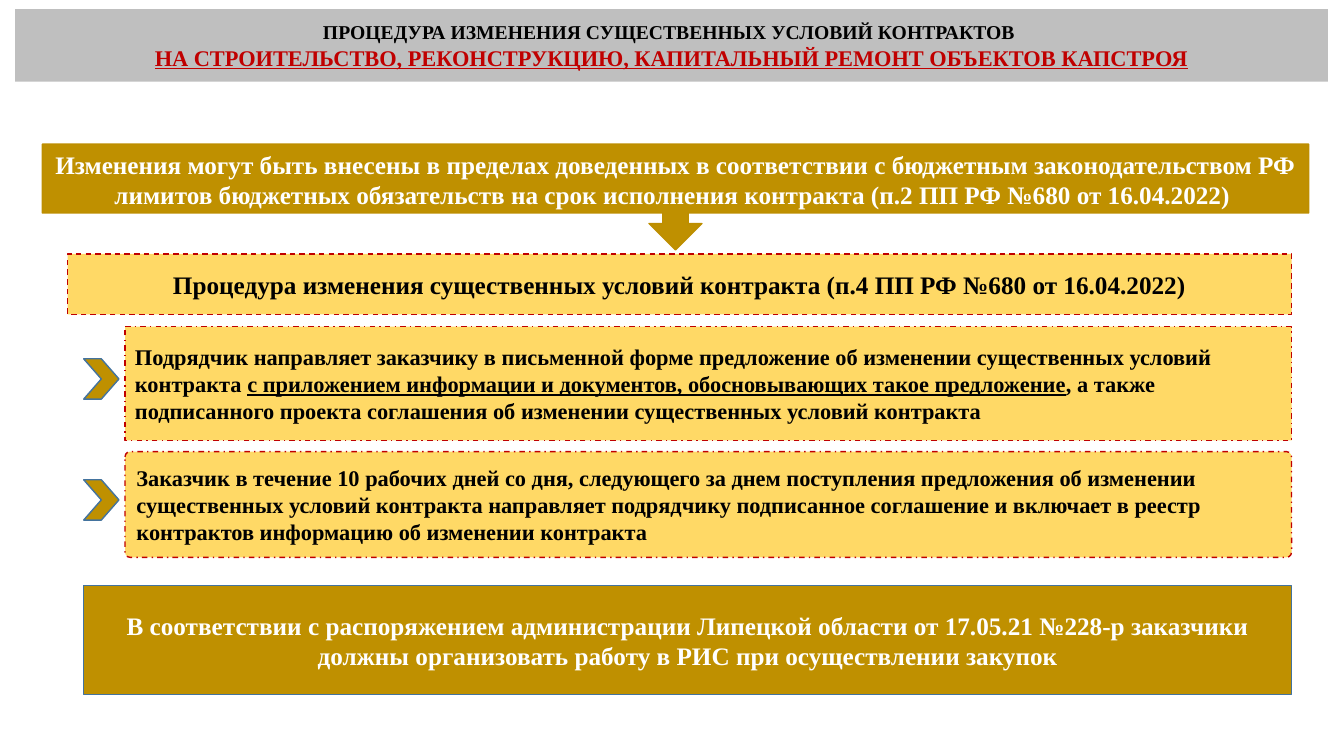
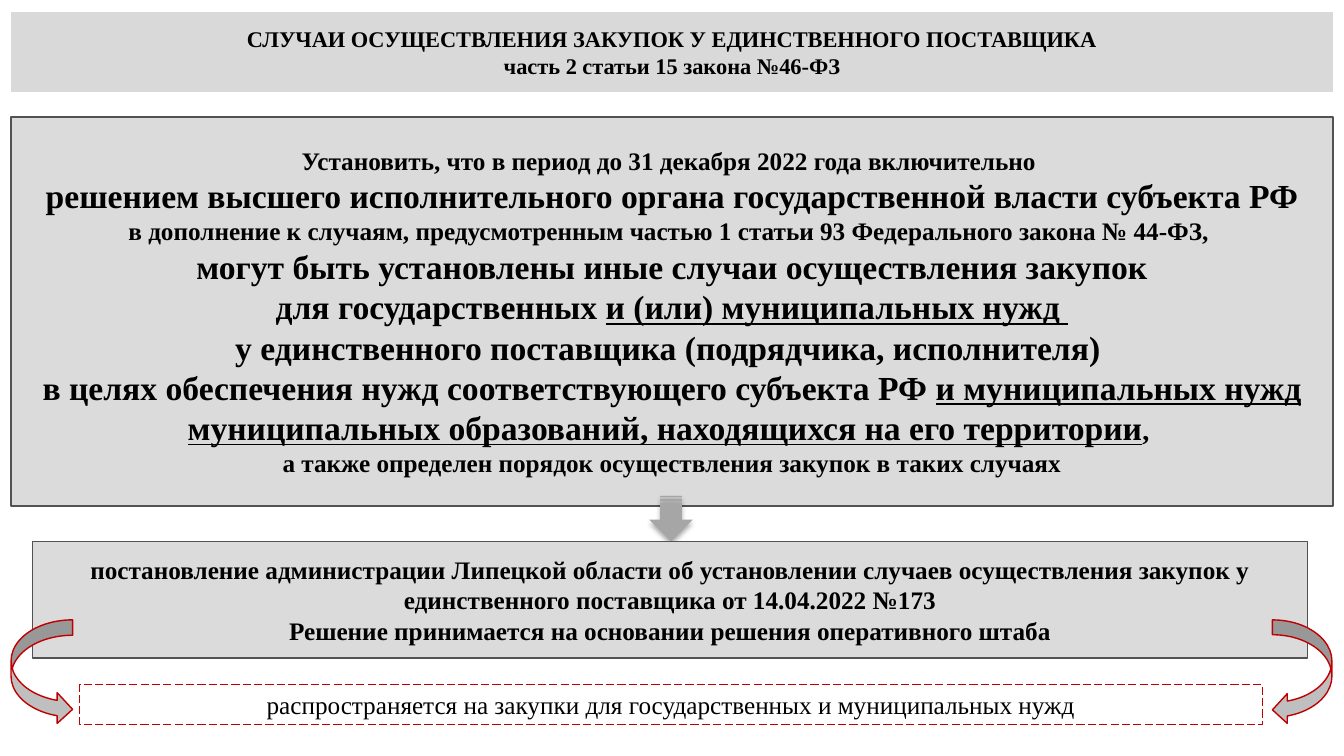
"""Two slides on changing contract terms and on single-supplier procurement."""
import pptx
import pptx.dml.color
import pptx.enum.dml
import pptx.enum.shapes
import pptx.enum.text
import pptx.oxml
import pptx.oxml.ns
import pptx.util

RGB = pptx.dml.color.RGBColor
SHAPE = pptx.enum.shapes.MSO_SHAPE
DASH = pptx.enum.dml.MSO_LINE
ALIGN = pptx.enum.text.PP_ALIGN
ANCHOR = pptx.enum.text.MSO_ANCHOR

PX = 9144
FONT = "Times New Roman"
BLACK = RGB(0x00, 0x00, 0x00)
WHITE = RGB(0xFF, 0xFF, 0xFF)
RED = RGB(0xC0, 0x00, 0x00)
GOLD = RGB(0xBF, 0x90, 0x00)
GOLD_EDGE = RGB(0xBD, 0x8E, 0x00)
SAND = RGB(0xFF, 0xD9, 0x66)
BLUE_EDGE = RGB(0x43, 0x73, 0x9E)
BAND_DARK = RGB(0xBF, 0xBF, 0xBF)
BAND_LIGHT = RGB(0xD9, 0xD9, 0xD9)
PANEL_GRAY = RGB(0xDB, 0xDB, 0xDB)
PANEL_EDGE = RGB(0x52, 0x52, 0x52)
ARROW_GRAY = RGB(0xA6, 0xA6, 0xA6)

STYLES = {
    "dark band": dict(fill=BAND_DARK),
    "light band": dict(fill=BAND_LIGHT),
    "limits": dict(fill=GOLD, edge=GOLD_EDGE, ink=WHITE),
    "gold": dict(fill=GOLD, edge=BLUE_EDGE, ink=WHITE),
    "procedure": dict(fill=SAND, edge=RED, dash=DASH.DASH),
    "step": dict(fill=SAND, edge=RED, dash=DASH.DASH_DOT),
    "panel": dict(fill=PANEL_GRAY, edge=PANEL_EDGE),
    "down arrow": dict(fill=ARROW_GRAY),
    "curved arrow": dict(fill=BAND_DARK, edge=RED),
    "scope": dict(edge=RED, dash=DASH.LONG_DASH, width=0.75, bold=False),
}

PROCEDURE_TITLE = [
    [("ПРОЦЕДУРА ИЗМЕНЕНИЯ СУЩЕСТВЕННЫХ УСЛОВИЙ КОНТРАКТОВ ", 14)],
    [("НА СТРОИТЕЛЬСТВО, РЕКОНСТРУКЦИЮ, КАПИТАЛЬНЫЙ РЕМОНТ ОБЪЕКТОВ КАПСТРОЯ", 16, True, RED)],
]
LIMITS = [[(
    "Изменения могут быть внесены в пределах доведенных в соответствии с бюджетным "
    "законодательством РФ лимитов бюджетных обязательств на срок исполнения контракта "
    "(п.2 ПП РФ №680 от 16.04.2022) ", 18)]]
PROCEDURE = [[("Процедура изменения существенных условий контракта (п.4 ПП РФ №680 от 16.04.2022)", 18)]]
STEPS = [
    (324, 113, 0, [[
        ("Подрядчик направляет заказчику в письменной форме предложение об изменении "
         "существенных условий контракта ", 16),
        ("с приложением информации и документов, обосновывающих такое предложение", 16, True),
        (", а также подписанного проекта соглашения об изменении существенных условий контракта", 16),
    ]]),
    (448, 105, 0.05, [[(
        "Заказчик в течение 10 рабочих дней со дня, следующего за днем поступления предложения "
        "об изменении существенных условий контракта направляет подрядчику подписанное соглашение "
        "и включает в реестр контрактов информацию об изменении контракта", 16)]]),
]
REGIONAL_ORDER = [[(
    "В соответствии с распоряжением администрации Липецкой области от 17.05.21 №228-р "
    "заказчики должны организовать работу в РИС при осуществлении закупок", 18)]]

SUPPLIER_TITLE = [
    [("СЛУЧАИ ОСУЩЕСТВЛЕНИЯ ЗАКУПОК У ЕДИНСТВЕННОГО ПОСТАВЩИКА", 16)],
    [("часть 2 статьи 15 закона №46-ФЗ", 16)],
]
RULE = [
    [("Установить, что в период до 31 декабря 2022 года включительно ", 18)],
    [("решением высшего исполнительного органа государственной власти субъекта РФ", 24)],
    [("в дополнение к случаям, предусмотренным частью 1 статьи 93 Федерального закона № 44-ФЗ, ", 18)],
    [("могут быть установлены иные случаи осуществления закупок", 24)],
    [("для государственных ", 24), ("и (или) муниципальных нужд ", 24, True)],
    [("у единственного поставщика (подрядчика, исполнителя) ", 24)],
    [("в целях обеспечения нужд соответствующего субъекта РФ ", 24),
     ("и муниципальных нужд муниципальных образований, находящихся на его территории", 24, True),
     (", ", 20)],
    [("а также определен порядок осуществления закупок в таких случаях", 18)],
]
DECREE = [
    [("постановление администрации Липецкой области об установлении случаев осуществления закупок "
      "у единственного поставщика от 14.04.2022 №173", 18)],
    [("Решение принимается на основании решения оперативного штаба", 18)],
]
SCOPE = [[("распространяется на закупки для государственных и муниципальных нужд", 18)]]


def write(frame, paragraphs, ink, bold, align, anchor):
    """Fill a text frame with paragraphs of (text, size, underline, colour) runs."""
    frame.word_wrap = True
    frame.vertical_anchor = anchor
    for index, runs in enumerate(paragraphs):
        paragraph = frame.add_paragraph() if index else frame.paragraphs[0]
        paragraph.alignment = align
        for text, size, *marks in runs:
            run = paragraph.add_run()
            run.text = text
            run.font.name = FONT
            run.font.size = pptx.util.Pt(size)
            run.font.bold = bold
            run.font.underline = bool(marks)
            run.font.color.rgb = marks[1] if len(marks) > 1 else ink


def block(slide, geometry, style, box, paragraphs=(), adjust=(), align=ALIGN.CENTER, anchor=ANCHOR.MIDDLE):
    """Add one styled shape whose box is in px."""
    look = STYLES[style]
    shape = slide.shapes.add_shape(geometry, *(length * PX for length in box))
    shape.shadow.inherit = False
    for index, value in enumerate(adjust):
        shape.adjustments[index] = value
    if "fill" in look:
        shape.fill.solid()
        shape.fill.fore_color.rgb = look["fill"]
    else:
        shape.fill.background()
    if "edge" in look:
        shape.line.color.rgb = look["edge"]
        shape.line.width = pptx.util.Pt(look.get("width", 1))
        if "dash" in look:
            shape.line.dash_style = look["dash"]
    else:
        shape.line.fill.background()
    if paragraphs:
        write(shape.text_frame, paragraphs, look.get("ink", BLACK), look.get("bold", True), align, anchor)
    return shape


def cast_shadow(shape, blur, distance, opacity):
    """Drop a black shadow below a shape; blur and distance in points, opacity in percent."""
    effects = shape.element.spPr.find(pptx.oxml.ns.qn("a:effectLst"))
    effects.append(pptx.oxml.parse_xml(
        f'<a:outerShdw {pptx.oxml.ns.nsdecls("a")} blurRad="{pptx.util.Pt(blur)}" '
        f'dist="{pptx.util.Pt(distance)}" dir="5400000" rotWithShape="0">'
        f'<a:srgbClr val="{BLACK}"><a:alpha val="{opacity * 1000}"/></a:srgbClr></a:outerShdw>'))


def title_band(slide, style, box, paragraphs):
    """Add the band that carries a slide title."""
    block(slide, SHAPE.ROUNDED_RECTANGLE, style, box, paragraphs, [0])


def build_procedure(slide):
    """Build the slide on changing contract terms."""
    title_band(slide, "dark band", (15, 9, 1302, 72), PROCEDURE_TITLE)
    for top, height, rounding, paragraphs in STEPS:
        block(slide, SHAPE.ROUNDED_RECTANGLE, "step", (124, top, 1157, height), paragraphs,
              [rounding], ALIGN.LEFT)
        block(slide, SHAPE.CHEVRON, "gold", (83, top + height // 2 - 24, 35, 40))
    block(slide, SHAPE.ROUNDED_RECTANGLE, "gold", (83, 581, 1198, 108), REGIONAL_ORDER, [0])
    block(slide, SHAPE.RECTANGLE, "procedure", (67, 252, 1214, 60), PROCEDURE)
    block(slide, SHAPE.DOWN_ARROW_CALLOUT, "limits", (42, 143, 1256, 105), LIMITS,
          [0.24, 0.25, 0.25, 0.65], anchor=ANCHOR.TOP)


def build_supplier(slide):
    """Build the slide on single-supplier procurement."""
    block(slide, SHAPE.FLOWCHART_PROCESS, "panel", (11, 116, 1311, 386), RULE)
    title_band(slide, "light band", (11, 12, 1311, 79), SUPPLIER_TITLE)
    arrow = block(slide, SHAPE.STRIPED_RIGHT_ARROW, "down arrow", (643, 493, 45, 43))
    arrow.rotation = 90
    cast_shadow(arrow, 3.5, 2.2, 32)
    block(slide, SHAPE.FLOWCHART_PROCESS, "panel", (32, 537, 1265, 116), DECREE)
    for geometry, left, width in ((SHAPE.CURVED_RIGHT_ARROW, 11, 61), (SHAPE.CURVED_LEFT_ARROW, 1262, 59)):
        block(slide, geometry, "curved arrow", (left, 615, width, 104))
    block(slide, SHAPE.RECTANGLE, "scope", (79, 679, 1173, 40), SCOPE, anchor=ANCHOR.TOP)


def main():
    """Build and save the deck."""
    deck = pptx.Presentation()
    deck.slide_width, deck.slide_height = 1333 * PX, 750 * PX
    for build in (build_procedure, build_supplier):
        build(deck.slides.add_slide(deck.slide_layouts[6]))
    deck.save("out.pptx")


if __name__ == "__main__":
    main()
